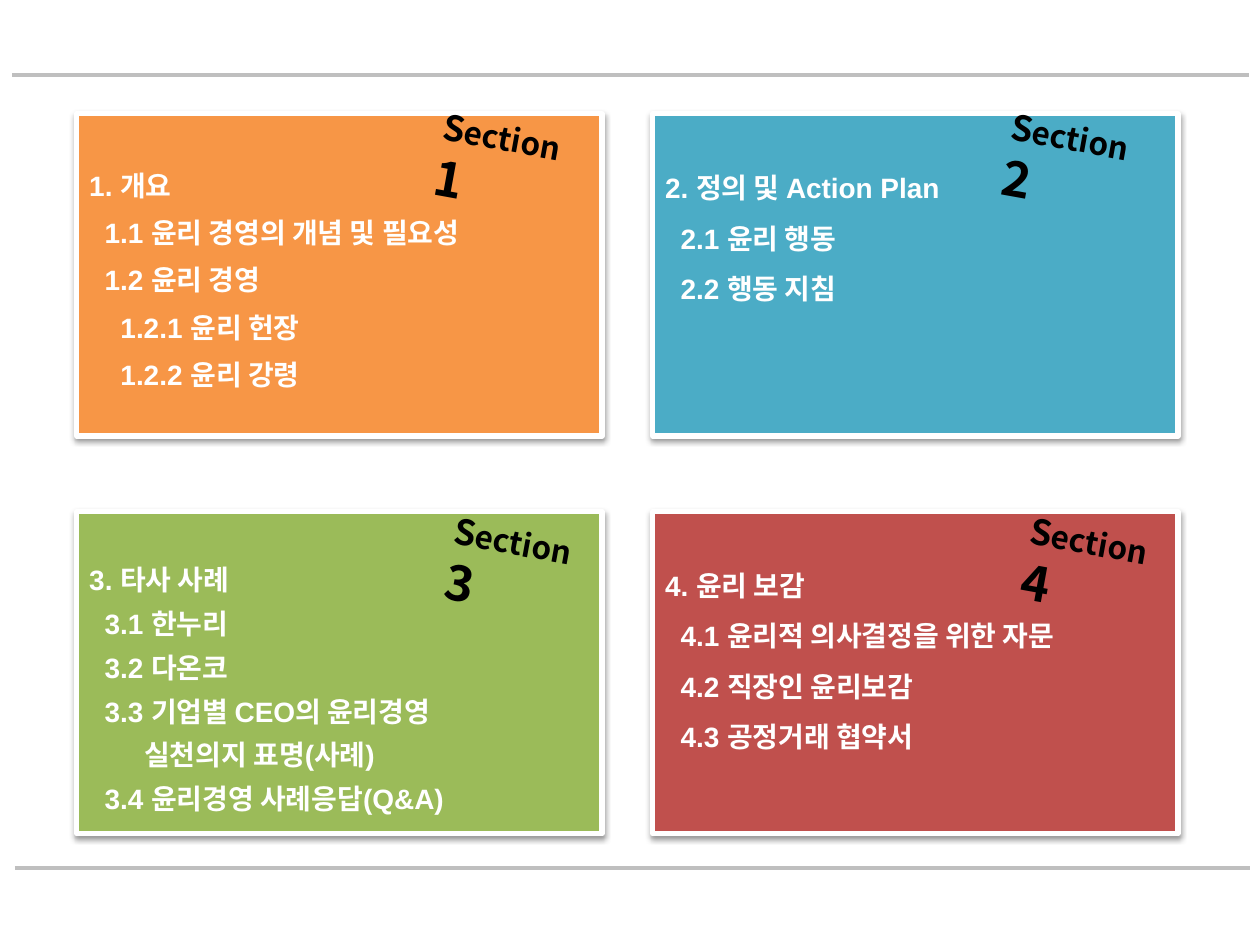
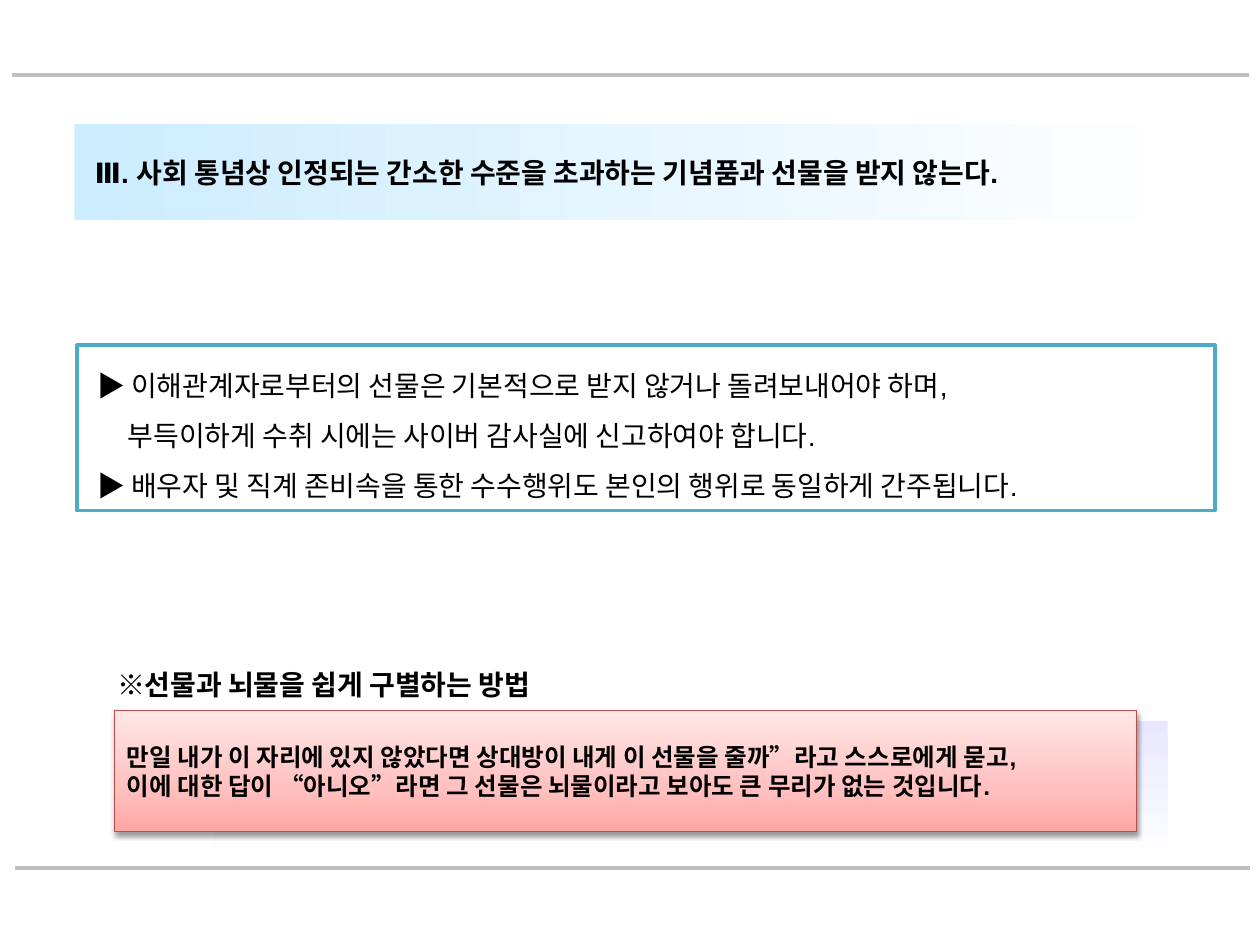
"""Build an ethics agenda slide and a slide with the rule on gifts."""
from lxml import etree
from pptx import Presentation
from pptx import util as u
from pptx.dml.color import RGBColor
from pptx.enum import shapes, text
from pptx.oxml import parse_xml
from pptx.oxml.ns import nsdecls, qn

HUES = {
    "rule": "BFBFBF", "white": "FFFFFF", "black": "000000",
    "orange": "F79646", "teal": "4BACC6", "green": "9BBB59", "red": "C0504D",
    "rim": "BF4C48",
}
FADES = {
    "lilac": (90, [(0, "E7E7FF"), (100, "FFFFFF")]),
    "sky": (0, [(0, "CCECFF"), (100, "FFFFFF")]),
    "rose": (270, [(0, "FFA6A5"), (35, "FFC0BF"), (100, "FFE7E7")]),
}
LATIN, KOREAN = "Arial", "Noto Sans CJK KR"

RULES = [(0.25, 1.52, 25.17), (0.3, 17.5, 25.2)]
CARD = (10.59, 6.5)
COLS, ROWS = (1.55, 13.16), (2.29, 10.31)
STEPS = (0, 0.31, 0.63, 1.11)
CARDS = [
    ("orange", 27.1, (8.64, 2.26, 10.4), [
        (0, "1. 개요"),
        (1, "1.1 윤리 경영의 개념 및 필요성"),
        (1, "1.2 윤리 경영"),
        (2, "1.2.1 윤리 헌장"),
        (2, "1.2.2 윤리 강령")]),
    ("teal", 28.7, (20.09, 2.26, 10.2), [
        (0, "2. 정의 및 Action Plan"),
        (1, "2.1 윤리 행동"),
        (1, "2.2 행동 지침")]),
    ("green", 25.1, (8.86, 10.41, 10.4), [
        (0, "3. 타사 사례"),
        (1, "3.1 한누리"),
        (1, "3.2 다온코"),
        (1, "3.3 기업별 CEO의 윤리경영"),
        (3, "실천의지 표명(사례)"),
        (1, "3.4 윤리경영 사례응답(Q&A)")]),
    ("red", 28.7, (20.47, 10.41, 10.4), [
        (0, "4. 윤리 보감"),
        (1, "4.1 윤리적 의사결정을 위한 자문"),
        (1, "4.2 직장인 윤리보감"),
        (1, "4.3 공정거래 협약서")]),
]

TITLE = [(0.16, "Ⅲ. 사회 통념상 인정되는 간소한 수준을 초과하는 기념품과 선물을 받지 않는다.")]
DUTIES = [
    (0.16, "▶ 이해관계자로부터의 선물은 기본적으로 받지 않거나 돌려보내어야 하며,"),
    (0.78, "부득이하게 수취 시에는 사이버 감사실에 신고하여야 합니다."),
    (0.16, "▶ 배우자 및 직계 존비속을 통한 수수행위도 본인의 행위로 동일하게 간주됩니다."),
]
HINT = [(0, "※선물과 뇌물을 쉽게 구별하는 방법")]
TEST = [
    (0, "만일 내가 이 자리에 있지 않았다면 상대방이 내게 이 선물을 줄까”라고 스스로에게 묻고,"),
    (0, "이에 대한 답이 “아니오”라면 그 선물은 뇌물이라고 보아도 큰 무리가 없는 것입니다."),
]


def hue(name):
    return RGBColor.from_string(HUES[name])


def style(run, size, color="black", bold=True, face=LATIN):
    font = run.font
    font.size, font.bold, font.name = u.Pt(size), bold, face
    font.color.rgb = hue(color)
    etree.SubElement(run._r.rPr, qn("a:ea")).set("typeface", KOREAN)


def write(shape, lines, size=16, pitch=None, color="black", bold=True,
          top=0.13, middle=False):
    frame = shape.text_frame
    frame.word_wrap = True
    frame.margin_top = u.Cm(top)
    frame.vertical_anchor = text.MSO_ANCHOR.MIDDLE if middle else text.MSO_ANCHOR.TOP
    frame.text = "\n".join(line for _, line in lines)
    for para, (left, _) in zip(frame.paragraphs, lines):
        para.alignment = text.PP_ALIGN.LEFT
        para.line_spacing = u.Pt(pitch) if pitch else None
        para._p.get_or_add_pPr().set("marL", str(u.Cm(left)))
        for run in para.runs:
            style(run, size, color, bold)


def fade(shape, name):
    angle, stops = FADES[name]
    marks = "".join(f'<a:gs pos="{at * 1000}"><a:srgbClr val="{code}"/></a:gs>'
                    for at, code in stops)
    shape.fill.background()
    props = shape._element.spPr
    props.replace(props.find(qn("a:noFill")), parse_xml(
        f'<a:gradFill {nsdecls("a")} rotWithShape="1"><a:gsLst>{marks}</a:gsLst>'
        f'<a:lin ang="{angle * 60000}" scaled="0"/></a:gradFill>'))


def shade(shape):
    shape._element.spPr.find(qn("a:effectLst")).append(parse_xml(
        f'<a:outerShdw {nsdecls("a")} blurRad="39370" dist="20320" dir="5400000" '
        f'rotWithShape="0"><a:srgbClr val="{HUES["black"]}">'
        '<a:alpha val="38000"/></a:srgbClr></a:outerShdw>'))


def block(slide, spot, fill, line=None, width=0, shadow=False):
    shape = slide.shapes.add_shape(shapes.MSO_SHAPE.RECTANGLE, *map(u.Cm, spot))
    if fill in FADES:
        fade(shape, fill)
    else:
        shape.fill.solid()
        shape.fill.fore_color.rgb = hue(fill)
    if line:
        shape.line.color.rgb = hue(line)
        shape.line.width = u.Pt(width)
    else:
        shape.line.fill.background()
    shape.shadow.inherit = False
    if shadow:
        shade(shape)
    return shape


def badge(slide, left, top, tilt, num):
    box = slide.shapes.add_textbox(*map(u.Cm, (left, top, 3.61, 1.45)))
    box.rotation = tilt
    frame = box.text_frame
    frame.word_wrap = True
    frame.auto_size = text.MSO_AUTO_SIZE.SHAPE_TO_FIT_TEXT
    para = frame.paragraphs[0]
    for part, size in (("S", 20), ("ection", 18), (str(num), 28)):
        if part == str(num):
            para.add_line_break()
        run = para.add_run()
        run.text = part
        style(run, size, face=KOREAN)


def start(deck):
    slide = deck.slides.add_slide(deck.slide_layouts[6])
    for left, top, right in RULES:
        rule = slide.shapes.add_connector(
            shapes.MSO_CONNECTOR.STRAIGHT, *map(u.Cm, (left, top, right, top)))
        rule.line.color.rgb = hue("rule")
        rule.line.width = u.Pt(2.25)
        etree.SubElement(rule._element.spPr, qn("a:effectLst"))
    return slide


def agenda(deck):
    slide = start(deck)
    for i, (fill, pitch, tag, items) in enumerate(CARDS):
        card = block(slide, (COLS[i % 2], ROWS[i // 2], *CARD), fill, "white", 3, True)
        lines = [(STEPS[level], line) for level, line in items]
        write(card, lines, pitch=pitch, color="white", top=0.82)
        badge(slide, *tag, i + 1)


def gifts(deck):
    slide = start(deck)
    block(slide, (4.29, 14.53, 19.25, 2.79), "lilac")
    title = block(slide, (1.5, 2.51, 22.43, 1.93), "sky")
    write(title, TITLE, middle=True)
    duty = block(slide, (1.55, 6.96, 22.94, 3.33), "white", "teal", 2)
    write(duty, DUTIES, pitch=28.7, bold=False)
    hint = slide.shapes.add_textbox(*map(u.Cm, (2.11, 13.33, 12.6, 0.94)))
    write(hint, HINT, pitch=19.1)
    test = block(slide, (2.31, 14.33, 20.6, 2.44), "rose", "rim", 0.75, True)
    write(test, TEST, size=14, pitch=16.6, middle=True)


def main():
    deck = Presentation()
    deck.slide_width, deck.slide_height = u.Cm(25.4), u.Cm(19.05)
    agenda(deck)
    gifts(deck)
    deck.save("out.pptx")


if __name__ == "__main__":
    main()
